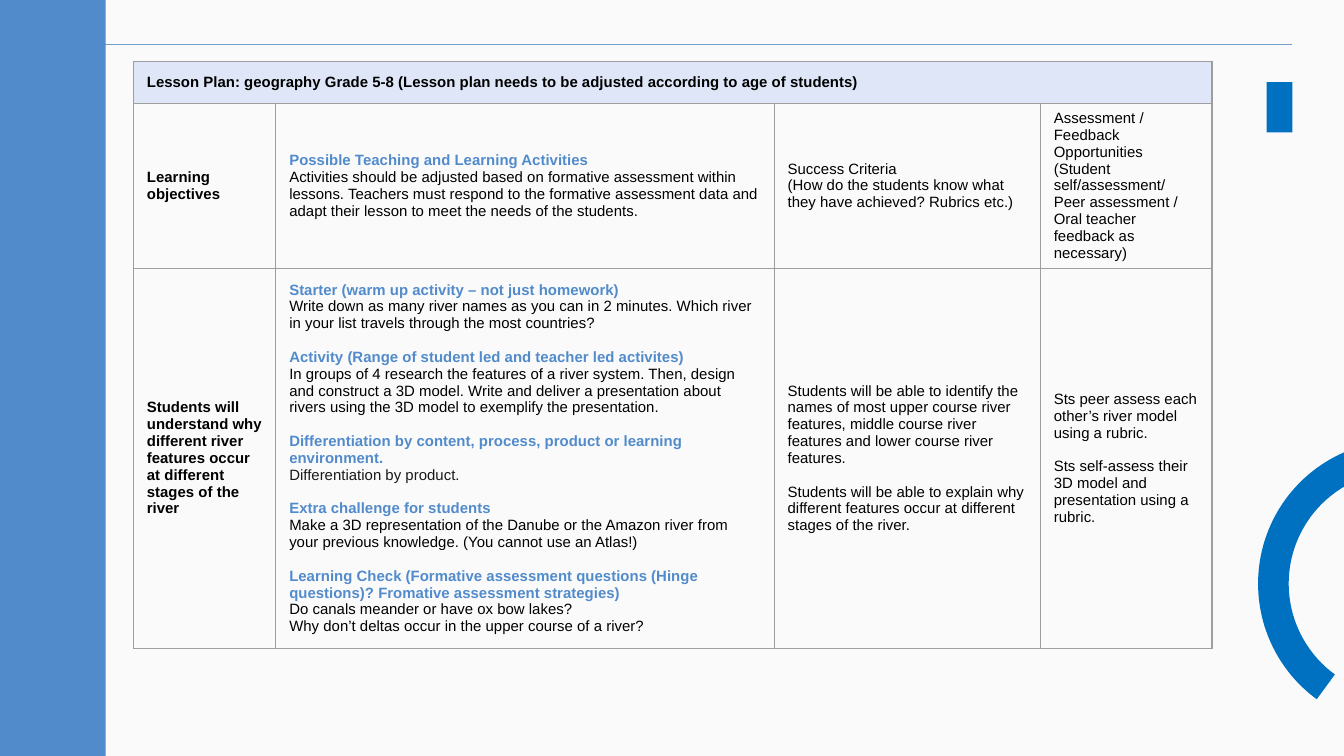
from dataclasses import dataclass

from lxml.etree import SubElement
from pptx import Presentation
from pptx.dml.color import RGBColor
from pptx.enum.shapes import MSO_CONNECTOR, MSO_SHAPE
from pptx.enum.text import MSO_ANCHOR
from pptx.oxml.ns import qn
from pptx.util import Pt


@dataclass(frozen=True)
class Theme:
    """Colours, font and sizes of the slide."""
    paper: str = "FAFAFA"
    band: str = "518BCB"
    rule: str = "759FCB"
    accent: str = "0070C0"
    header: str = "DEE6F7"
    border: str = "9E9E9E"
    ink: str = "000000"
    soft: str = "191919"
    font: str = "Arial"
    size: float = 8
    gap: float = 9
    line: float = 0.75


THEME = Theme()
STYLES = {
    "bold": (THEME.ink, True),
    "head": (THEME.band, True),
    "body": (THEME.ink, False),
    "soft": (THEME.soft, False),
}
COLS = [76.3, 267, 142.6, 92]
ROWS = [22.5, 88.4, 203.6]
TITLE = [[("bold", "Lesson Plan: geography Grade 5-8 (Lesson plan needs to be "
           "adjusted according to age of students)")]]
LABELS = [
    [[("bold", "Learning objectives")]],
    [[("head", "Possible Teaching and Learning Activities"),
      ("body", "Activities should be adjusted based on formative assessment within "
       "lessons. Teachers must respond to the formative assessment data and adapt "
       "their lesson to meet the needs of the students.")]],
    [[("body", "Success Criteria"),
      ("body", "(How do the students know what they have achieved? Rubrics etc.)")]],
    [[("body", "Assessment / Feedback Opportunities (Student self/assessment/ "
       "Peer assessment / Oral teacher feedback as necessary)")]],
]
PLAN = [
    [[("bold", "Students will understand why different river features occur at "
       "different stages of the river")]],
    [[("head", "Starter (warm up activity – not just homework)"),
      ("body", "Write down as many river names as you can in 2 minutes. Which river "
       "in your list travels through the most countries?")],
     [("head", "Activity (Range of student led and teacher led activites)"),
      ("body", "In groups of 4 research the features of a river system. Then, design "
       "and construct a 3D model. Write and deliver a presentation about rivers "
       "using the 3D model to exemplify the presentation.")],
     [("head", "Differentiation by content, process, product or learning environment."),
      ("soft", "Differentiation by product.")],
     [("head", "Extra challenge for students"),
      ("body", "Make a 3D representation of the Danube or the Amazon river from your "
       "previous knowledge. (You cannot use an Atlas!)")],
     [("head", "Learning Check (Formative assessment questions (Hinge questions)? "
       "Fromative assessment strategies)"),
      ("body", "Do canals meander or have ox bow lakes?"),
      ("body", "Why don’t deltas occur in the upper course of a river?")]],
    [[("body", "Students will be able to identify the names of most upper course "
       "river features, middle course river features and lower course river "
       "features.")],
     [("body", "Students will be able to explain why different features occur at "
       "different stages of the river.")]],
    [[("body", "Sts peer assess each other’s river model using a rubric.")],
     [("body", "Sts self-assess their 3D model and presentation using a rubric.")]],
]


def paint(fill, color):
    """Give a fill one solid colour."""
    fill.solid()
    fill.fore_color.rgb = RGBColor.from_string(color)


def add_rule(slide, left, right, top):
    """Draw a thin level line without a shadow."""
    rule = slide.shapes.add_connector(
        MSO_CONNECTOR.STRAIGHT, Pt(left), Pt(top), Pt(right), Pt(top))
    rule.line.color.rgb = RGBColor.from_string(THEME.rule)
    rule.line.width = Pt(THEME.line)
    SubElement(rule._element.spPr, qn("a:effectLst"))


def add_block(slide, kind, box, color):
    """Draw a plain filled shape."""
    shape = slide.shapes.add_shape(kind, *map(Pt, box))
    shape.shadow.inherit = False
    shape.line.fill.background()
    paint(shape.fill, color)
    return shape


def add_arc(slide, box, start, end, width):
    """Draw an open ring between two angles in degrees."""
    arc = add_block(slide, MSO_SHAPE.BLOCK_ARC, box, THEME.accent)
    for index, value in enumerate((start * 0.6, end * 0.6, width)):
        arc.adjustments[index] = value


def set_border(cell):
    """Line all four sides of a cell."""
    props = cell._tc.get_or_add_tcPr()
    for index, side in enumerate(("lnL", "lnR", "lnT", "lnB")):
        line = props.makeelement(qn(f"a:{side}"), {"w": str(Pt(THEME.line))})
        fill = SubElement(line, qn("a:solidFill"))
        SubElement(fill, qn("a:srgbClr"), val=THEME.border)
        props.insert(index, line)


def write_cell(cell, blocks):
    """Fill a cell with blocks of styled text, set apart by a gap."""
    cell.vertical_anchor = MSO_ANCHOR.MIDDLE
    frame = cell.text_frame
    for block in blocks:
        for index, (style, text) in enumerate(block):
            first = block is blocks[0] and index == 0
            para = frame.paragraphs[0] if first else frame.add_paragraph()
            para.text = text
            if index == 0 and not first:
                para.space_before = Pt(THEME.gap)
            color, bold = STYLES[style]
            font = para.font
            font.name, font.size, font.bold = THEME.font, Pt(THEME.size), bold
            font.color.rgb = RGBColor.from_string(color)


def add_plan(slide, left, top):
    """Build the lesson table under its merged title row."""
    table = slide.shapes.add_table(
        len(ROWS), len(COLS), Pt(left), Pt(top), Pt(sum(COLS)), Pt(sum(ROWS))).table
    table.first_row = table.horz_banding = False
    for col, width in zip(table.columns, COLS):
        col.width = Pt(width)
    for row, height in zip(table.rows, ROWS):
        row.height = Pt(height)
    for cell in table.iter_cells():
        cell.fill.background()
        set_border(cell)
    title = table.cell(0, 0)
    title.merge(table.cell(0, len(COLS) - 1))
    paint(title.fill, THEME.header)
    write_cell(title, TITLE)
    for row, content in enumerate((LABELS, PLAN), 1):
        for col, blocks in enumerate(content):
            write_cell(table.cell(row, col), blocks)


def main():
    """Build and save the lesson plan slide."""
    deck = Presentation()
    deck.slide_width, deck.slide_height = Pt(720), Pt(405)
    slide = deck.slides.add_slide(deck.slide_layouts[6])
    paint(slide.background.fill, THEME.paper)
    add_rule(slide, 3.6, 692.4, 23.9)
    add_block(slide, MSO_SHAPE.RECTANGLE, (0, 0, 56.6, 405), THEME.band)
    add_arc(slide, (674, 236, 153.4, 153.4), 126.16, 72, 0.107)
    add_block(slide, MSO_SHAPE.RECTANGLE, (678.6, 44, 13.7, 27), THEME.accent)
    add_plan(slide, 71.5, 32.8)
    deck.save("out.pptx")


if __name__ == "__main__":
    main()
